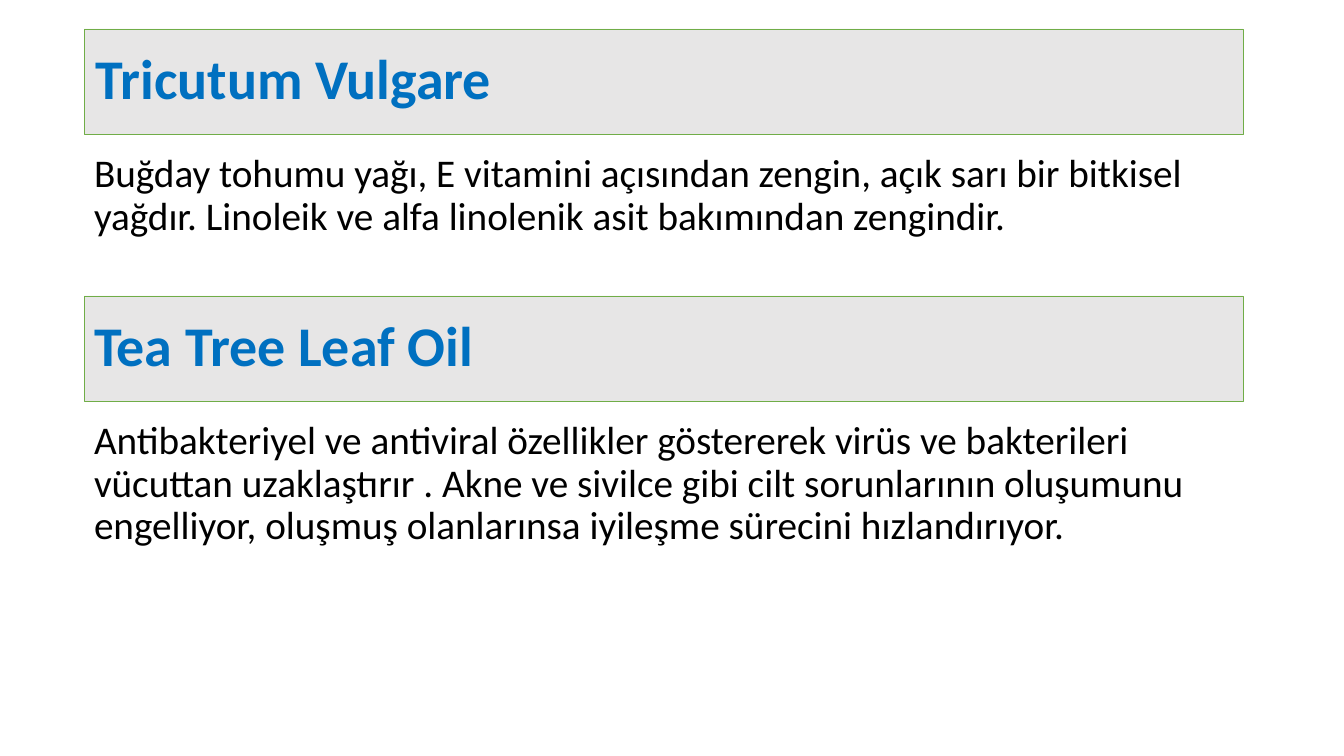
from pptx import Presentation
from pptx.dml.color import RGBColor
from pptx.enum.shapes import MSO_SHAPE
from pptx.enum.text import MSO_ANCHOR, PP_ALIGN
from pptx.util import Pt

RECTANGLE = MSO_SHAPE.RECTANGLE
MIDDLE, TOP = MSO_ANCHOR.MIDDLE, MSO_ANCHOR.TOP
LEFT = PP_ALIGN.LEFT

EMU_PER_PX = 914400 / 100.8
SLIDE_WIDTH, SLIDE_HEIGHT = 1344, 756
MARGIN, CONTENT_WIDTH = 84, 1159
HEADING_HEIGHT, BODY_OFFSET = 105, 120
INSET = 10

COLORS = {
    "band": "E7E6E6",
    "border": "70AD47",
    "heading": "0070C0",
    "body": "000000",
}
HEADING_FONT = {"name": "Calibri", "size": Pt(40), "bold": True}
BODY_FONT = {"name": "Calibri", "size": Pt(28), "bold": False}

OILS = [
    {
        "top": 29,
        "heading": "Tricutum Vulgare",
        "indent": 2,
        "body_height": 123,
        "body": "Buğday tohumu yağı, E vitamini açısından zengin, açık sarı bir "
                "bitkisel yağdır. Linoleik ve alfa linolenik asit bakımından "
                "zengindir.",
    },
    {
        "top": 296,
        "heading": "Tea Tree Leaf Oil",
        "indent": 0,
        "body_height": 218,
        "body": "Antibakteriyel ve antiviral özellikler göstererek virüs ve "
                "bakterileri vücuttan uzaklaştırır . Akne ve sivilce gibi cilt "
                "sorunlarının oluşumunu engelliyor, oluşmuş olanlarınsa "
                "iyileşme sürecini hızlandırıyor.",
    },
]


def px(length):
    """Convert pixels to EMU."""
    return round(length * EMU_PER_PX)


def color(key):
    """Look up a named colour."""
    return RGBColor.from_string(COLORS[key])


def set_attributes(target, values):
    """Set each attribute of the target from a dict."""
    for attribute, value in values.items():
        setattr(target, attribute, value)


def write_text(frame, text, font, color_key, anchor, space_before, indent=0):
    """Write one left-aligned paragraph into a wrapping text frame."""
    set_attributes(frame, {
        "word_wrap": True,
        "vertical_anchor": anchor,
        "margin_left": px(INSET + indent),
        "margin_right": px(INSET),
    })
    paragraph = frame.paragraphs[0]
    set_attributes(paragraph, {
        "alignment": LEFT,
        "line_spacing": 0.9,
        "space_before": Pt(space_before),
    })
    run = paragraph.add_run()
    run.text = text
    set_attributes(run.font, font)
    run.font.color.rgb = color(color_key)


def add_heading(slide, top, text, indent):
    """Add a bordered heading band."""
    band = slide.shapes.add_shape(
        RECTANGLE, px(MARGIN), px(top), px(CONTENT_WIDTH), px(HEADING_HEIGHT))
    band.shadow.inherit = False
    band.fill.solid()
    band.fill.fore_color.rgb = color("band")
    band.line.color.rgb = color("border")
    band.line.width = Pt(0.5)
    write_text(band.text_frame, text, HEADING_FONT, "heading", MIDDLE, 0, indent)


def add_body(slide, top, height, text):
    """Add the description of an oil."""
    description = slide.shapes.add_textbox(
        px(MARGIN), px(top), px(CONTENT_WIDTH), px(height))
    write_text(description.text_frame, text, BODY_FONT, "body", TOP, 10)


def main():
    """Build the slide and save it."""
    deck = Presentation()
    deck.slide_width, deck.slide_height = px(SLIDE_WIDTH), px(SLIDE_HEIGHT)
    slide = deck.slides.add_slide(deck.slide_layouts[6])
    for oil in OILS:
        add_heading(slide, oil["top"], oil["heading"], oil["indent"])
        add_body(slide, oil["top"] + BODY_OFFSET, oil["body_height"], oil["body"])
    deck.save("out.pptx")


if __name__ == "__main__":
    main()
